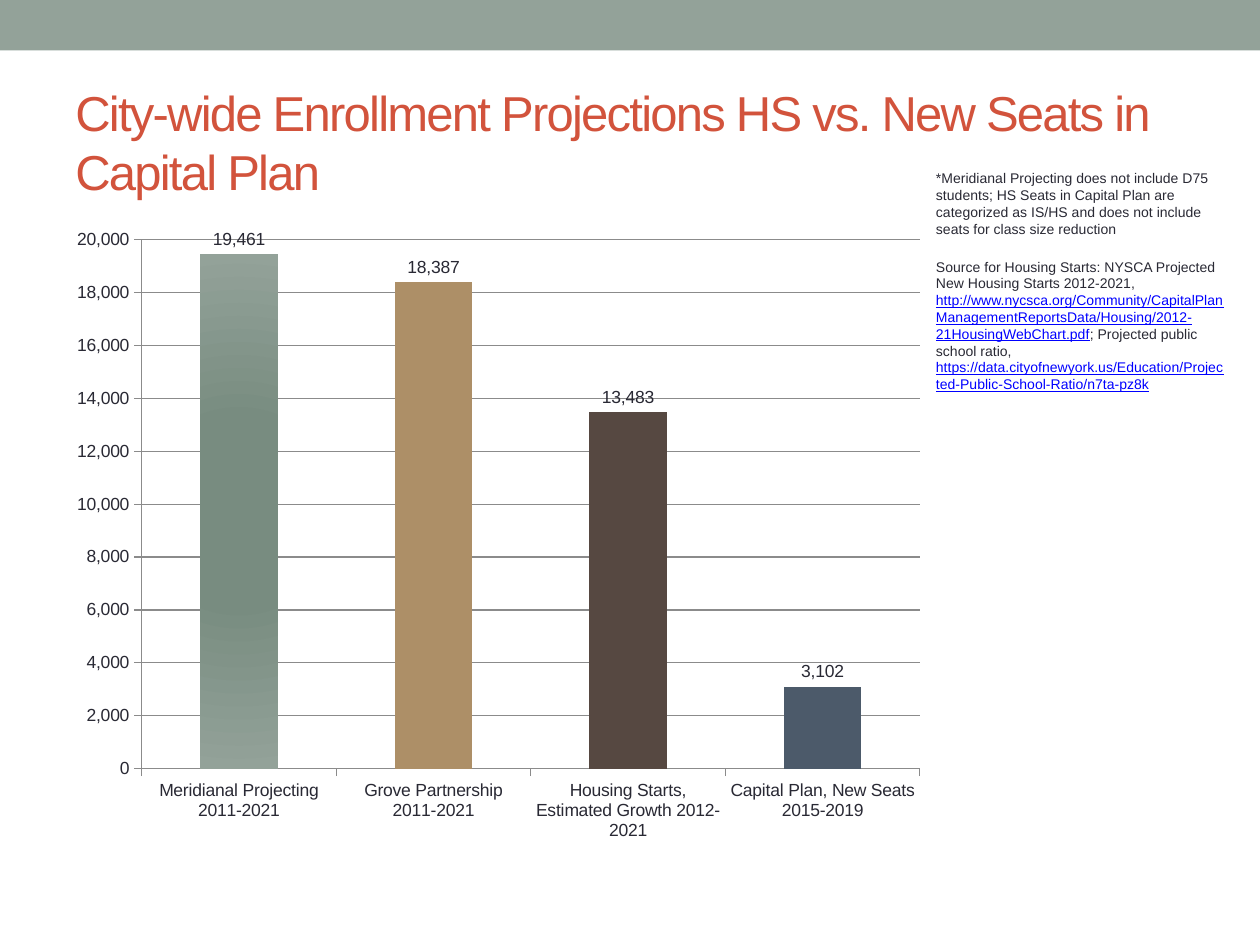
from lxml import etree
from pptx import Presentation
from pptx.chart.data import CategoryChartData
from pptx.dml.color import RGBColor
from pptx.enum import chart as charts, shapes, text
from pptx.oxml import parse_xml
from pptx.oxml.ns import nsdecls, qn
from pptx.util import Pt

COLORS = {
    "sage": "93A299", "moss": "788C80", "tan": "AD8F67", "brown": "564841",
    "slate": "4C5A6A", "title": "D2533C", "ink": "292934", "link": "0000FF",
    "rule": "8B8B8B",
}


class SlideBuilder:
    font_name = "Arial"

    def __init__(self, slide):
        self.slide = slide

    def color(self, name):
        return RGBColor.from_string(COLORS[name])

    def style(self, font, size, color):
        font.name = self.font_name
        font.size = Pt(size)
        font.color.rgb = self.color(color)

    def band(self, left, top, width, height, color):
        band = self.slide.shapes.add_shape(
            shapes.MSO_SHAPE.RECTANGLE, Pt(left), Pt(top), Pt(width), Pt(height))
        band.shadow.inherit = False
        band.fill.solid()
        band.fill.fore_color.rgb = self.color(color)
        band.line.fill.background()

    def text(self, left, top, width, height, runs, size,
             anchor=text.MSO_ANCHOR.TOP, spacing=0):
        frame = self.slide.shapes.add_textbox(
            Pt(left), Pt(top), Pt(width), Pt(height)).text_frame
        frame.word_wrap = True
        frame.vertical_anchor = anchor
        for words, color in runs:
            run = frame.paragraphs[0].add_run()
            run.text = words
            self.style(run.font, size, color)
            if color == "link":
                run.font.underline = True
            if spacing:
                run.font._element.set("spc", str(spacing * 100))

    def radial_fill(self, point, center, edge):
        point.format.fill.solid()
        properties = point.format.fill._xPr
        stops = "".join(
            f'<a:gs pos="{position}"><a:srgbClr val="{COLORS[name]}"/></a:gs>'
            for position, name in ((0, center), (35000, center), (100000, edge)))
        gradient = parse_xml(
            f'<a:gradFill {nsdecls("a")}><a:gsLst>{stops}</a:gsLst>'
            '<a:path path="circle"><a:fillToRect l="50000" t="50000" '
            'r="50000" b="50000"/></a:path></a:gradFill>')
        properties.replace(properties.find(qn("a:solidFill")), gradient)

    def place_plot(self, chart, **fractions):
        plot_area = chart._chartSpace.chart.plotArea
        for old in plot_area.findall(qn("c:layout")):
            plot_area.remove(old)
        layout = etree.Element(qn("c:layout"))
        manual = etree.SubElement(layout, qn("c:manualLayout"))
        settings = {"layoutTarget": "inner", "xMode": "edge", "yMode": "edge"}
        for tag, value in {**settings, **fractions}.items():
            etree.SubElement(manual, qn(f"c:{tag}")).set("val", str(value))
        plot_area.insert(0, layout)

    def column_chart(self, left, top, width, height, columns):
        data = CategoryChartData(number_format="#,##0")
        data.categories = [name for name, value, color in columns]
        data.add_series("Series 1", [value for name, value, color in columns])
        chart = self.slide.shapes.add_chart(
            charts.XL_CHART_TYPE.COLUMN_CLUSTERED,
            Pt(left), Pt(top), Pt(width), Pt(height), data).chart
        chart.has_legend = False
        chart.has_title = False
        self.style(chart.font, 10, "ink")
        self.place_plot(chart, x=0.09, y=0.03, w=0.89, h=0.83)

        values = chart.value_axis
        values.minimum_scale, values.maximum_scale = 0, 20000
        values.major_unit = 2000
        values.has_major_gridlines = True
        values.tick_labels.number_format = "#,##0"
        values.tick_labels.number_format_is_linked = False
        for axis in (values, chart.category_axis):
            axis.major_tick_mark = charts.XL_TICK_MARK.OUTSIDE
        for rule in (values, values.major_gridlines, chart.category_axis):
            rule.format.line.color.rgb = self.color("rule")
            rule.format.line.width = Pt(0.75)

        plot = chart.plots[0]
        plot.gap_width = 150
        plot.vary_by_categories = False
        plot.has_data_labels = True
        labels = plot.data_labels
        labels.show_value = True
        labels.number_format = "#,##0"
        labels.number_format_is_linked = False
        labels.position = charts.XL_LABEL_POSITION.OUTSIDE_END
        self.style(labels.font, 10, "ink")

        series = plot.series[0]
        series.format.fill.solid()
        series.format.fill.fore_color.rgb = self.color("sage")
        for index, (name, value, color) in enumerate(columns):
            fill = series.points[index].format.fill
            fill.solid()
            fill.fore_color.rgb = self.color(color)
        self.radial_fill(series.points[0], "moss", "sage")


def main():
    deck = Presentation()
    deck.slide_width, deck.slide_height = Pt(720), Pt(540)
    builder = SlideBuilder(deck.slides.add_slide(deck.slide_layouts[6]))

    builder.band(0, 0, 720, 28.8, "sage")
    builder.text(
        36, 41.76, 648, 77.76,
        [("City-wide Enrollment Projections HS vs. New Seats in Capital Plan", "title")],
        28, text.MSO_ANCHOR.MIDDLE, -1)
    builder.column_chart(36, 126, 499.68, 364.32, [
        ("Meridianal Projecting 2011-2021", 19461, "sage"),
        ("Grove Partnership 2011-2021", 18387, "tan"),
        ("Housing Starts, Estimated Growth 2012-2021", 13483, "brown"),
        ("Capital Plan, New Seats 2015-2019", 3102, "slate"),
    ])

    notes_left, notes_width = 527.76, 180.72
    builder.text(notes_left, 93.6, notes_width, 46.08, [
        ("*Meridianal Projecting does not include D75 students; HS Seats in "
         "Capital Plan are categorized as IS/HS and does not include seats for "
         "class size reduction", "ink")], 8)
    builder.text(notes_left, 144, notes_width, 94.32, [
        ("Source for Housing Starts: NYSCA Projected New Housing Starts 2012-2021, ", "ink"),
        ("http://www.nycsca.org/Community/CapitalPlanManagementReportsData/"
         "Housing/2012-21HousingWebChart.pdf", "link"),
        ("; Projected public school ratio, ", "ink"),
        ("https://data.cityofnewyork.us/Education/"
         "Projected-Public-School-Ratio/n7ta-pz8k", "link")], 8)

    deck.save("out.pptx")


if __name__ == "__main__":
    main()
